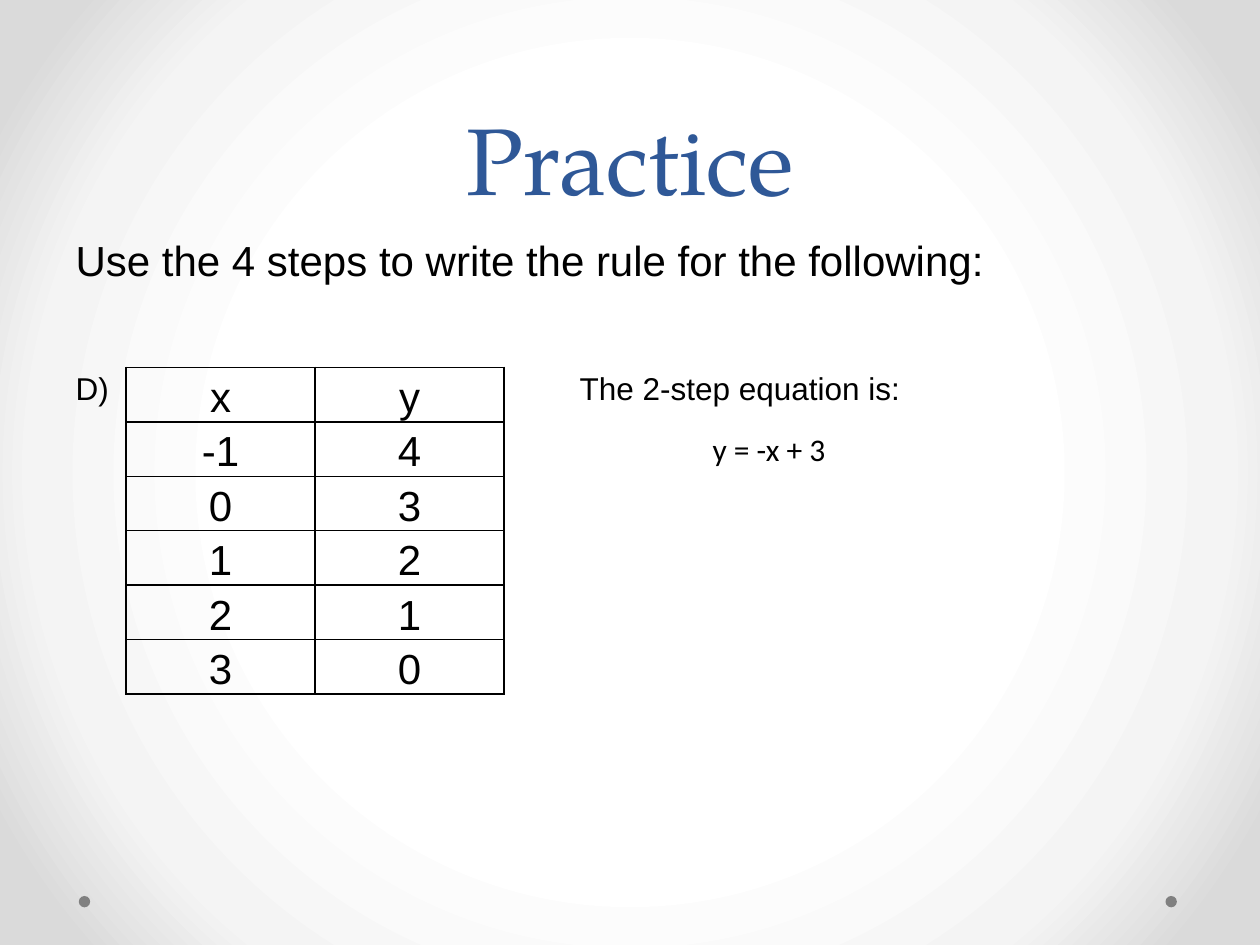
from pptx import Presentation
from pptx.dml.color import RGBColor
from pptx.enum.shapes import MSO_SHAPE
from pptx.enum.text import MSO_ANCHOR, MSO_AUTO_SIZE, PP_ALIGN
from pptx.oxml import parse_xml
from pptx.oxml.ns import nsdecls, qn
from pptx.util import Pt

TITLE = "Practice"
# text, size, font, space before, left indent
LINES = [
    ("Use the 4 steps to write the rule for the following:", 24, "Arial", 0, 0),
    ("D)\tThe 2-step equation is:", 18, "Arial", 35, 0),
    ("y = -x + 3", 18, "Calibri", 0, 364),
]
TAB = 288
ROWS = [("x", "y"), ("-1", "4"), ("0", "3"), ("1", "2"), ("2", "1"), ("3", "0")]
DOTS = [45, 666]
HEX = {"title": "2F5897", "text": "000000", "dot": "808080"}
STOPS = [(50, "FFFFFF"), (76, "F4F4F4"), (92, "DADADA")]


def place(shape, left, top, width, height):
    """Set the box of a shape in points."""
    shape.left, shape.top = Pt(left), Pt(top)
    shape.width, shape.height = Pt(width), Pt(height)


def write(para, text, size, font, tone):
    """Add one formatted run to a paragraph."""
    run = para.add_run()
    run.text = text
    run.font.size, run.font.name = Pt(size), font
    run.font.color.rgb = RGBColor.from_string(HEX[tone])


def shade(slide):
    """Give the slide its round gradient."""
    slide.background.fill.gradient()
    old = next(slide.element.iter(qn("a:gradFill")))
    stops = "".join(
        f'<a:gs pos="{pos * 1000}"><a:srgbClr val="{tone}"/></a:gs>' for pos, tone in STOPS
    )
    new = parse_xml(
        f'<a:gradFill {nsdecls("a")} rotWithShape="1"><a:gsLst>{stops}</a:gsLst>'
        '<a:path path="circle"><a:fillToRect l="50000" t="50000" r="50000" b="50000"/>'
        "</a:path></a:gradFill>"
    )
    old.getparent().replace(old, new)


def dots(slide):
    """Draw the two corner dots."""
    for left in DOTS:
        dot = slide.shapes.add_shape(MSO_SHAPE.OVAL, Pt(left), Pt(512), Pt(6.5), Pt(6.5))
        dot.shadow.inherit = False
        dot.fill.solid()
        dot.fill.fore_color.rgb = RGBColor.from_string(HEX["dot"])
        dot.line.fill.background()


def head(slide):
    """Fill the title."""
    title = slide.shapes.title
    place(title, 36, 0, 648, 126)
    frame = title.text_frame
    frame.auto_size = MSO_AUTO_SIZE.NONE
    frame.vertical_anchor = MSO_ANCHOR.BOTTOM
    para = frame.paragraphs[0]
    para.alignment, para.line_spacing = PP_ALIGN.CENTER, Pt(58)
    write(para, TITLE, 54, "TeX Gyre Pagella", "title")


def body(slide):
    """Fill the body lines."""
    box = slide.placeholders[1]
    place(box, 36, 126, 648, 356.4)
    frame = box.text_frame
    frame.auto_size = MSO_AUTO_SIZE.NONE
    for num, (text, size, font, gap, left) in enumerate(LINES):
        para = frame.add_paragraph() if num else frame.paragraphs[0]
        props = para._p.get_or_add_pPr()
        props.set("marL", str(int(Pt(left))))
        props.set("indent", "0")
        props.set("defTabSz", str(int(Pt(TAB))))
        props.append(parse_xml(f'<a:buNone {nsdecls("a")}/>'))
        para.alignment, para.line_spacing = PP_ALIGN.LEFT, 1.15
        para.space_before, para.space_after = Pt(gap), Pt(10)
        write(para, text, size, font, "text")


def edge(cell):
    """Draw thin borders round a cell."""
    props = cell._tc.get_or_add_tcPr()
    for num, side in enumerate(("lnL", "lnR", "lnT", "lnB")):
        props.insert(num, parse_xml(
            f'<a:{side} {nsdecls("a")} w="{Pt(1)}"><a:solidFill>'
            f'<a:srgbClr val="{HEX["text"]}"/></a:solidFill></a:{side}>'
        ))


def grid(slide):
    """Build the table of x and y."""
    high = 31.1
    table = slide.shapes.add_table(
        len(ROWS), 2, Pt(72), Pt(210), Pt(216), Pt(high * len(ROWS))
    ).table
    table.first_row = table.horz_banding = False
    for row, vals in zip(table.rows, ROWS):
        row.height = Pt(high)
        for cell, val in zip(row.cells, vals):
            cell.margin_left = cell.margin_right = Pt(5)
            cell.margin_top = cell.margin_bottom = Pt(0)
            cell.fill.background()
            edge(cell)
            para = cell.text_frame.paragraphs[0]
            para.alignment, para.line_spacing = PP_ALIGN.CENTER, 1.15
            write(para, val, 24, "Arial", "text")


def main():
    """Build and save the slide."""
    deck = Presentation()
    deck.slide_width, deck.slide_height = Pt(720), Pt(540)
    slide = deck.slides.add_slide(deck.slide_layouts[1])
    for step in (shade, dots, head, body, grid):
        step(slide)
    deck.save("out.pptx")


if __name__ == "__main__":
    main()
